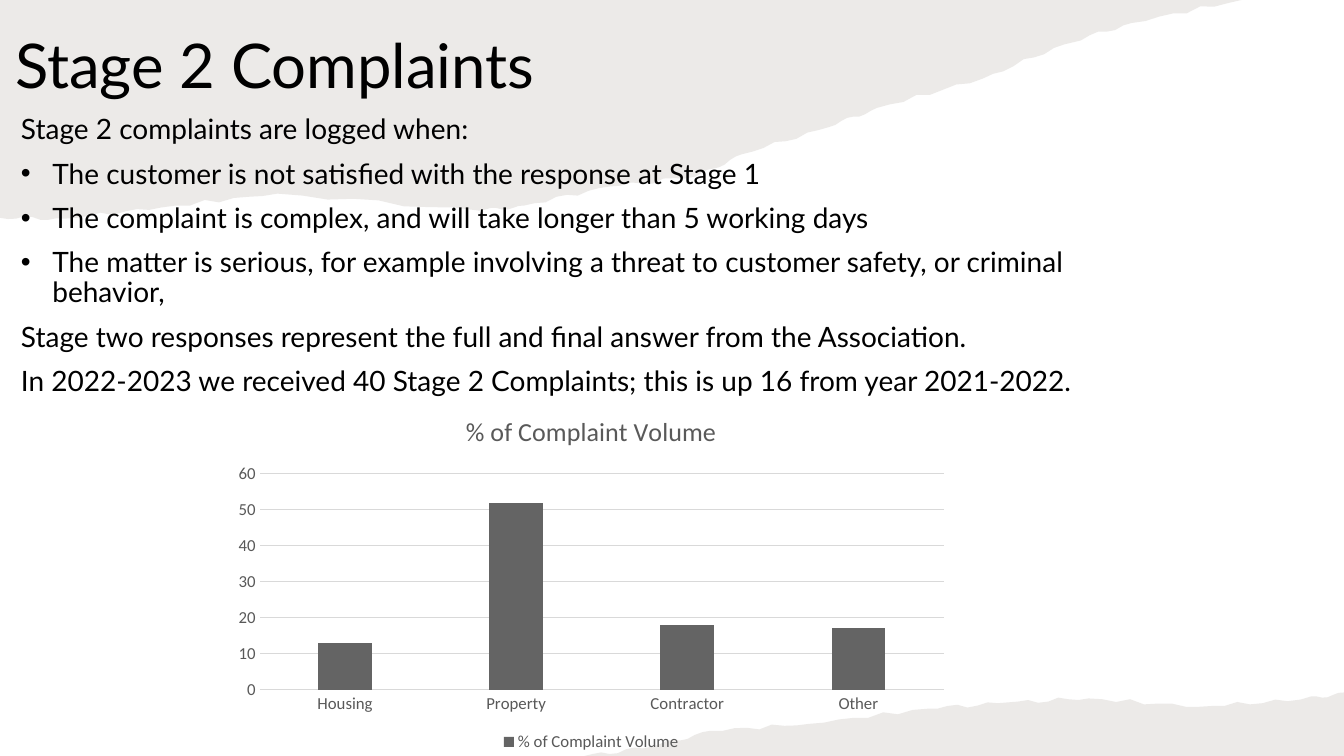
"""Build the Stage 2 Complaints slide with its torn-paper background and column chart."""
from dataclasses import dataclass
from itertools import pairwise
from math import pi, sin

from lxml import etree
from pptx import Presentation
from pptx.chart.data import CategoryChartData
from pptx.dml.color import RGBColor
from pptx.enum.chart import XL_CHART_TYPE, XL_LEGEND_POSITION, XL_TICK_MARK
from pptx.enum.text import MSO_ANCHOR
from pptx.oxml.ns import qn
from pptx.util import Cm, Pt

COLUMN_CLUSTERED = XL_CHART_TYPE.COLUMN_CLUSTERED
LEGEND_BOTTOM = XL_LEGEND_POSITION.BOTTOM
NO_TICK = XL_TICK_MARK.NONE
TOP = MSO_ANCHOR.TOP
MIDDLE = MSO_ANCHOR.MIDDLE

SLIDE_WIDTH = 33.87
SLIDE_HEIGHT = 19.05
UNITS_PER_CM = 100
TEAR_STEPS = 8
TEAR_DEPTH = 0.06
TEAR_FREQUENCY = 7
BULLET_INDENT = Cm(0.79)


@dataclass(frozen=True)
class Theme:
    text_font: str = "Lato"
    chart_font: str = "Calibri"
    text: RGBColor = RGBColor(0x00, 0x00, 0x00)
    paper: RGBColor = RGBColor(0x82, 0x76, 0x6A)
    paper_opacity: int = 15000
    column: RGBColor = RGBColor(0x64, 0x64, 0x64)
    chart_text: RGBColor = RGBColor(0x59, 0x59, 0x59)
    grid: RGBColor = RGBColor(0xD9, 0xD9, 0xD9)
    title_size: Pt = Pt(44)
    body_size: Pt = Pt(20)
    chart_title_size: Pt = Pt(18.6)
    chart_size: Pt = Pt(12)


theme = Theme()


def style_font(font, name, size, color):
    font.name = name
    font.size = size
    font.bold = False
    font.color.rgb = color


def tear_between(bends):
    """Join the bends by straight runs with a small ripple that fades out at each bend."""
    edge = []
    for (start_x, start_y), (end_x, end_y) in pairwise(bends):
        for step in range(TEAR_STEPS):
            share = step / TEAR_STEPS
            x = start_x + share * (end_x - start_x)
            y = start_y + share * (end_y - start_y)
            edge.append((x, y + TEAR_DEPTH * sin(pi * share) * sin(TEAR_FREQUENCY * x)))
    return edge + [bends[-1]]


presentation = Presentation()
presentation.slide_width = Cm(SLIDE_WIDTH)
presentation.slide_height = Cm(SLIDE_HEIGHT)
slide = presentation.slides.add_slide(presentation.slide_layouts[6])

top_bends = [
    (31.29, 0), (28.52, 0.58), (26.82, 1.12), (24.77, 1.98), (22.1, 2.72),
    (20.9, 3.2), (18.69, 3.89), (17.53, 4.45), (15.37, 4.7), (13.21, 5.18),
    (12.09, 5.31), (6.99, 4.88), (4.06, 5.23), (1.63, 5.51), (0, 5.49),
]
bottom_bends = [
    (14.73, SLIDE_HEIGHT), (16.41, 18.82), (17.88, 18.42), (20.4, 18.24), (23.37, 17.86),
    (25.4, 17.7), (27.43, 17.6), (30.23, 17.81), (32.77, 17.63), (SLIDE_WIDTH, 17.45),
]
for corner, bends in (((0, 0), top_bends), ((SLIDE_WIDTH, SLIDE_HEIGHT), bottom_bends)):
    outline = [(x * UNITS_PER_CM, y * UNITS_PER_CM) for x, y in [corner] + tear_between(bends)]
    builder = slide.shapes.build_freeform(*outline[0], scale=Cm(1) / UNITS_PER_CM)
    builder.add_line_segments(outline[1:], close=True)
    paper = builder.convert_to_shape()
    paper.shadow.inherit = False
    paper.line.fill.background()
    paper.fill.solid()
    paper.fill.fore_color.rgb = theme.paper
    paper_color = paper.fill._xPr.find(".//" + qn("a:srgbClr"))
    etree.SubElement(paper_color, qn("a:alpha"), val=str(theme.paper_opacity))

body_lines = [
    ("Stage 2 complaints are logged when:", False),
    ("The customer is not satisfied with the response at Stage 1", True),
    ("The complaint is complex, and will take longer than 5 working days", True),
    ("The matter is serious, for example involving a threat to customer safety, "
     "or criminal behavior,", True),
    ("Stage two responses represent the full and final answer from the Association.", False),
    ("In 2022-2023 we received 40 Stage 2 Complaints; this is up 16 from year 2021-2022.", False),
]
title_lines = [("Stage 2 Complaints", False)]
text_blocks = [
    (body_lines, (0.28, 2.79, 29.21, 12.98), TOP, theme.body_size, Pt(10)),
    (title_lines, (0.13, -0.1, 29.21, 3.68), MIDDLE, theme.title_size, Pt(0)),
]
for lines, box, anchor, size, space_before in text_blocks:
    text_frame = slide.shapes.add_textbox(*map(Cm, box)).text_frame
    text_frame.word_wrap = True
    text_frame.vertical_anchor = anchor
    for index, (line, bulleted) in enumerate(lines):
        paragraph = text_frame.add_paragraph() if index else text_frame.paragraphs[0]
        paragraph.line_spacing = 0.9
        paragraph.space_before = space_before
        if bulleted:
            properties = paragraph._p.get_or_add_pPr()
            properties.set("marL", str(BULLET_INDENT))
            properties.set("indent", str(-BULLET_INDENT))
            etree.SubElement(properties, qn("a:buFont"), typeface="Arial")
            etree.SubElement(properties, qn("a:buChar"), char="•")
        run = paragraph.add_run()
        run.text = line
        style_font(run.font, theme.text_font, size, theme.text)

measure = "% of Complaint Volume"
percent_by_source = {"Housing": 13, "Property": 52, "Contractor": 18, "Other": 17}
complaint_data = CategoryChartData()
complaint_data.categories = list(percent_by_source)
complaint_data.add_series(measure, percent_by_source.values())
chart = slide.shapes.add_chart(
    COLUMN_CLUSTERED, Cm(5.64), Cm(9.98), Cm(18.52), Cm(9.07), complaint_data
).chart
style_font(chart.font, theme.chart_font, theme.chart_size, theme.chart_text)

chart.has_title = True
run = chart.chart_title.text_frame.paragraphs[0].add_run()
run.text = measure
style_font(run.font, theme.chart_font, theme.chart_title_size, theme.chart_text)

chart.has_legend = True
chart.legend.position = LEGEND_BOTTOM
chart.legend.include_in_layout = False

for axis in (chart.category_axis, chart.value_axis):
    axis.major_tick_mark = NO_TICK
    axis.minor_tick_mark = NO_TICK
    style_font(axis.tick_labels.font, theme.chart_font, theme.chart_size, theme.chart_text)
chart.value_axis.minimum_scale = 0
chart.value_axis.maximum_scale = 60
chart.value_axis.major_unit = 10
chart.value_axis.format.line.fill.background()
for line in (chart.category_axis.format.line, chart.value_axis.major_gridlines.format.line):
    line.color.rgb = theme.grid
    line.width = Pt(0.75)

plot = chart.plots[0]
plot.vary_by_categories = False
plot.gap_width = 219
plot.overlap = -27
columns = plot.series[0]
columns.format.fill.solid()
columns.format.fill.fore_color.rgb = theme.column

presentation.save("out.pptx")
